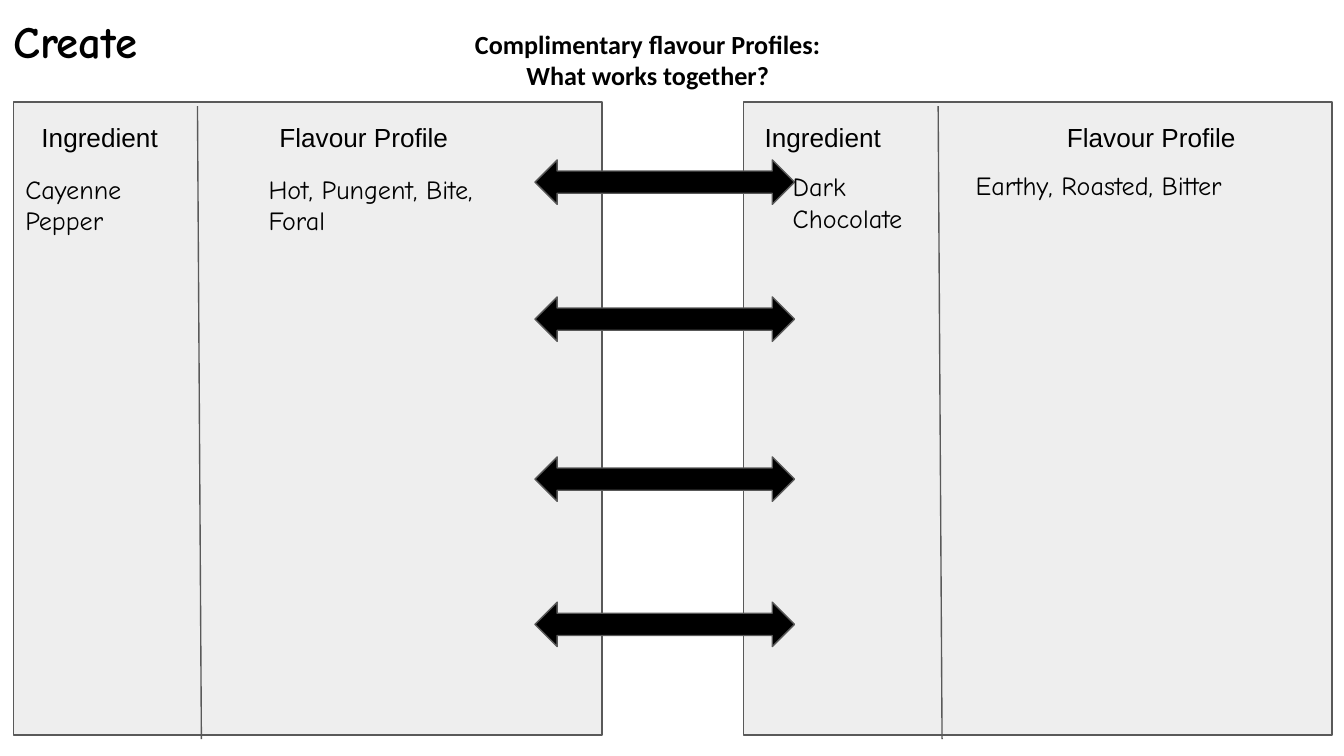
import pptx
import pptx.dml.color
import pptx.enum.shapes
import pptx.enum.text
import pptx.oxml.ns
import pptx.util
from lxml import etree

Pt = pptx.util.Pt
SHAPE = pptx.enum.shapes.MSO_SHAPE
ALIGN = pptx.enum.text.PP_ALIGN
BLACK, GREY, PANEL = "000000", "595959", "EEEEEE"
HAND = "Comic Neue"


def rgb(value):
    """Return the colour for a hex string."""
    return pptx.dml.color.RGBColor.from_string(value)


def add_text(slide, lines, x, y, w, h, font="Arial", size=14, bold=False, align=ALIGN.LEFT):
    """Add a wrapped text box whose lines share one paragraph."""
    tf = slide.shapes.add_textbox(Pt(x), Pt(y), Pt(w), Pt(h)).text_frame
    tf.word_wrap = True
    tf.margin_left = tf.margin_right = tf.margin_top = tf.margin_bottom = Pt(7.2)
    p = tf.paragraphs[0]
    p.alignment = align
    for i, line in enumerate(lines):
        if i:
            p.add_line_break()
        r = p.add_run()
        r.text = line
        r.font.name = font
        r.font.size = Pt(size)
        r.font.bold = bold
        r.font.color.rgb = rgb(BLACK)


def add_block(shapes, kind, x, y, w, h, fill):
    """Add a filled preset shape with a thin grey outline."""
    sp = shapes.add_shape(kind, Pt(x), Pt(y), Pt(w), Pt(h))
    sp.shadow.inherit = False
    sp.fill.solid()
    sp.fill.fore_color.rgb = rgb(fill)
    sp.line.color.rgb = rgb(GREY)
    sp.line.width = Pt(0.75)


def add_divider(shapes, x1, y1, x2, y2):
    """Add a thin grey line without a shadow."""
    line = shapes.add_connector(
        pptx.enum.shapes.MSO_CONNECTOR.STRAIGHT, Pt(x1), Pt(y1), Pt(x2), Pt(y2))
    line.line.color.rgb = rgb(GREY)
    line.line.width = Pt(0.75)
    etree.SubElement(line._element.spPr, pptx.oxml.ns.qn("a:effectLst"))


def add_panel(slide, x, divider_x):
    """Add a grouped panel split by a slightly slanted divider."""
    shapes = slide.shapes.add_group_shape().shapes
    add_block(shapes, SHAPE.RECTANGLE, x, 54.7, 315.4, 339.1, PANEL)
    add_divider(shapes, divider_x, 56.9, divider_x + 2.1, 396)


def main():
    """Build the flavour pairing slide."""
    prs = pptx.Presentation()
    prs.slide_width, prs.slide_height = Pt(720), Pt(405)
    slide = prs.slides.add_slide(prs.slide_layouts[6])

    add_text(slide, ["Create"], 0, 0, 119.5, 43.2, HAND, 24, True)
    add_text(slide, ["Complimentary flavour Profiles:", "What works together?"],
             150.5, 7.9, 393.1, 43.2, "Calibri", bold=True, align=ALIGN.CENTER)

    for x, divider_x in ((398.2, 502.6), (7.2, 105.8)):
        add_panel(slide, x, divider_x)
    for y in (85.7, 159.1, 244.8, 322.6):
        add_block(slide.shapes, SHAPE.LEFT_RIGHT_ARROW, 286.6, y, 139, 23.8, BLACK)

    for ingredient_x, profile_x in ((15.1, 142.6), (402.5, 564.5)):
        add_text(slide, ["Ingredient"], ingredient_x, 57.6, 80.6, 28.1)
        add_text(slide, ["Flavour Profile"], profile_x, 57.6, 119.5, 28.1)

    entries = (
        ("Cayenne Pepper", 6.5, 85.7, 93.6),
        ("Hot, Pungent, Bite, Foral", 136.8, 85.7, 149),
        ("Earthy, Roasted, Bitter", 515.5, 83.5, 183.6),
        ("Dark Chocolate", 417.6, 84.2, 93.6),
    )
    for text, x, y, w in entries:
        add_text(slide, [text], x, y, w, 28.1, HAND)

    prs.save("out.pptx")


if __name__ == "__main__":
    main()
